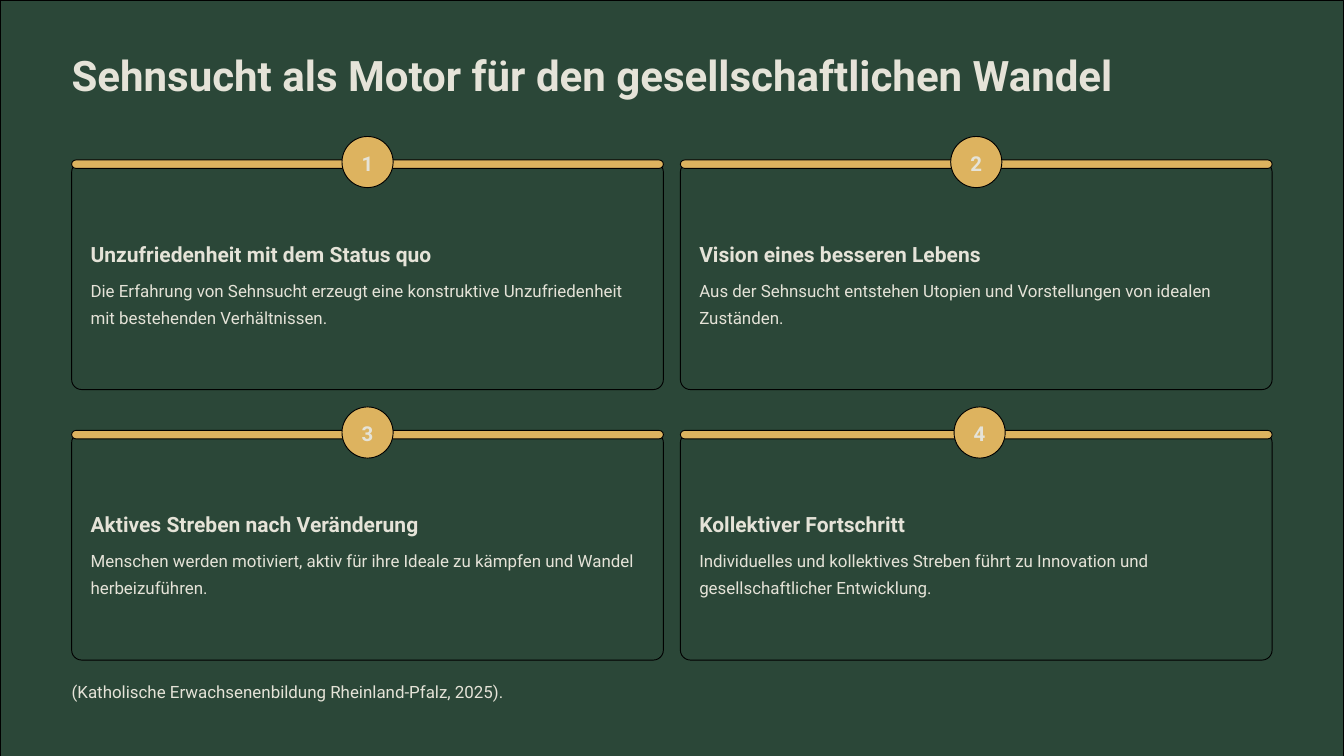
from pptx import Presentation
from pptx.dml.color import RGBColor
from pptx.enum.shapes import MSO_SHAPE
from pptx.enum.text import MSO_ANCHOR, MSO_AUTO_SIZE, PP_ALIGN
from pptx.util import Pt

TITLE = "Sehnsucht als Motor für den gesellschaftlichen Wandel"
SOURCE = "(Katholische Erwachsenenbildung Rheinland-Pfalz, 2025)."
# heading, description, horizontal shift of the number badge
CARDS = [
    ("Unzufriedenheit mit dem Status quo",
     "Die Erfahrung von Sehnsucht erzeugt eine konstruktive Unzufriedenheit "
     "mit bestehenden Verhältnissen.", 0),
    ("Vision eines besseren Lebens",
     "Aus der Sehnsucht entstehen Utopien und Vorstellungen von idealen Zuständen.", 0),
    ("Aktives Streben nach Veränderung",
     "Menschen werden motiviert, aktiv für ihre Ideale zu kämpfen und Wandel "
     "herbeizuführen.", 0),
    ("Kollektiver Fortschritt",
     "Individuelles und kollektives Streben führt zu Innovation und "
     "gesellschaftlicher Entwicklung.", 3.6),
]

GREEN = RGBColor(0x2B, 0x47, 0x38)
GOLD = RGBColor(0xDD, 0xB3, 0x5F)
CREAM = RGBColor(0xE5, 0xE3, 0xD8)
BLACK = RGBColor(0, 0, 0)
FONT = "Roboto"

RECT, ROUNDED, OVAL = MSO_SHAPE.RECTANGLE, MSO_SHAPE.ROUNDED_RECTANGLE, MSO_SHAPE.OVAL
TOP, LEFT, CENTER = MSO_ANCHOR.TOP, PP_ALIGN.LEFT, PP_ALIGN.CENTER

SLIDE_W, SLIDE_H = 1440, 810
MARGIN = 76.8
CARDS_TOP = 173.6
CARD_W, CARD_H = 634, 243.8
COLUMN_STEP, ROW_STEP = 652.2, 289.8
BAR_H, BAR_RISE = 9, 2.2
BADGE = 54.8
PADDING = 20.2
HEADING_DROP, BODY_DROP = 84, 120


def write(shape, text, size, line_spacing, bold=False, align=LEFT):
    frame = shape.text_frame
    frame.text = text
    frame.word_wrap = True
    frame.auto_size = MSO_AUTO_SIZE.NONE
    frame.vertical_anchor = TOP
    frame.margin_left = frame.margin_right = frame.margin_top = frame.margin_bottom = 0
    paragraph = frame.paragraphs[0]
    paragraph.alignment = align
    paragraph.line_spacing = Pt(line_spacing)
    paragraph.space_before = Pt(0)
    font = paragraph.runs[0].font
    font.name, font.size, font.bold = FONT, Pt(size), bold
    font.color.rgb = CREAM


def add_text(slide, x, y, w, h, *style, **options):
    write(slide.shapes.add_textbox(Pt(x), Pt(y), Pt(w), Pt(h)), *style, **options)


def add_outlined(slide, kind, x, y, w, h, fill=None, radius=None):
    shape = slide.shapes.add_shape(kind, Pt(x), Pt(y), Pt(w), Pt(h))
    shape.shadow.inherit = False
    if fill is None:
        shape.fill.background()
    else:
        shape.fill.solid()
        shape.fill.fore_color.rgb = fill
    shape.line.color.rgb = BLACK
    shape.line.width = Pt(1)
    if radius is not None:
        shape.adjustments[0] = radius / min(w, h)
    return shape


def add_card(slide, index, heading, body, badge_shift):
    row, column = divmod(index, 2)
    x = MARGIN + column * COLUMN_STEP
    y = CARDS_TOP + row * ROW_STEP
    add_outlined(slide, ROUNDED, x, y, CARD_W, CARD_H, GREEN, radius=10.8)
    add_outlined(slide, ROUNDED, x, y - BAR_RISE, CARD_W, BAR_H, GOLD, radius=BAR_H / 2)
    badge = add_outlined(slide, OVAL, x + (CARD_W - BADGE) / 2 + badge_shift,
                         y - BADGE / 2, BADGE, BADGE, GOLD)
    write(badge, str(index + 1), 21.9, 33.5, bold=True, align=CENTER)
    text_w = CARD_W - 2 * PADDING
    add_text(slide, x + PADDING, y + HEADING_DROP, text_w, 28.1,
             heading, 22.5, 28.1, bold=True)
    add_text(slide, x + PADDING, y + BODY_DROP, text_w, 55.4, body, 18.1, 28.8)


def main():
    prs = Presentation()
    prs.slide_width, prs.slide_height = Pt(SLIDE_W), Pt(SLIDE_H)
    slide = prs.slides.add_slide(prs.slide_layouts[5])
    slide.background.fill.solid()
    slide.background.fill.fore_color.rgb = GREEN
    add_outlined(slide, RECT, 0, 0, SLIDE_W, SLIDE_H)

    title = slide.shapes.title
    title.left, title.top = Pt(MARGIN), Pt(50.4)
    title.width, title.height = Pt(1153.4), Pt(55.4)
    write(title, TITLE, 45, 56.9, bold=True)

    for index, card in enumerate(CARDS):
        add_card(slide, index, *card)
    add_text(slide, MARGIN, 722.9, SLIDE_W - 2 * MARGIN, 26.6, SOURCE, 18.1, 28.8)
    prs.save("out.pptx")


if __name__ == "__main__":
    main()
